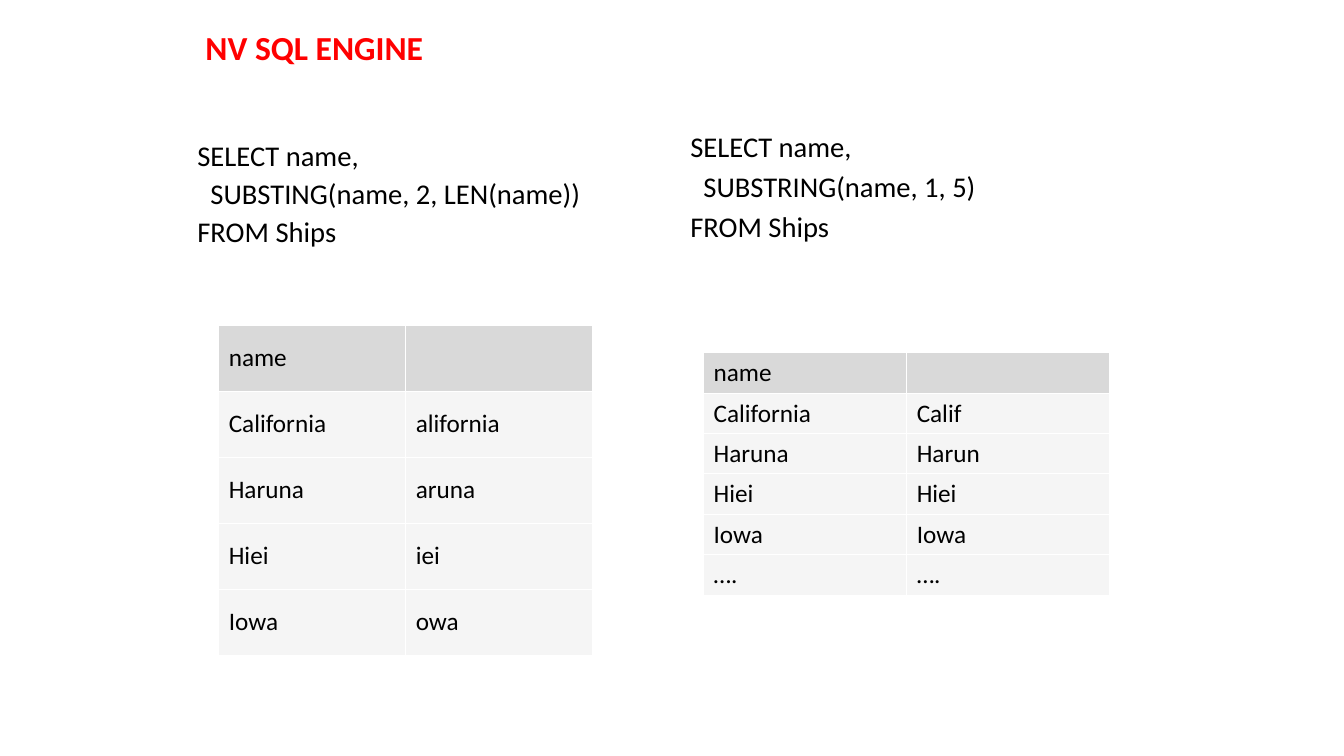
from lxml.etree import SubElement as add_element
from pptx import Presentation
from pptx.dml.color import RGBColor as Color
from pptx.enum.text import MSO_ANCHOR as Anchor
from pptx.oxml.ns import qn
from pptx.util import Inches, Pt

COLORS = {"title": "FF0000", "text": "000000", "header": "D9D9D9",
          "body": "F5F5F5", "border": "FFFFFF"}
COLUMNS, ROWS = 40, 30
CODE_INDENT = Inches(0.13)


class SlideBuilder:
    font = "Calibri"

    def __init__(self, deck):
        self.column = deck.slide_width / COLUMNS
        self.row = deck.slide_height / ROWS
        self.page = deck.slides.add_slide(deck.slide_layouts[6])

    def place(self, left, top, width, height):
        return (round(left * self.column), round(top * self.row),
                round(width * self.column), round(height * self.row))

    def add_span(self, para, text, size, color="text", bold=False):
        span = para.add_run()
        span.text = text
        span.font.name = self.font
        span.font.size = Pt(size)
        span.font.bold = bold
        span.font.color.rgb = Color.from_string(COLORS[color])

    def add_box(self, area, anchor):
        frame = self.page.shapes.add_textbox(*self.place(*area)).text_frame
        frame.word_wrap = True
        frame.vertical_anchor = anchor
        return frame

    def add_title(self, area, text):
        frame = self.add_box(area, Anchor.MIDDLE)
        self.add_span(frame.paragraphs[0], text, 24, "title", True)

    def add_query(self, area, lines, space_before, line_spacing):
        frame = self.add_box(area, Anchor.TOP)
        for index, (text, indented) in enumerate(lines):
            para = frame.add_paragraph() if index else frame.paragraphs[0]
            para.space_before = Pt(space_before)
            para.line_spacing = line_spacing
            if indented:
                para._p.get_or_add_pPr().set("marL", str(CODE_INDENT))
            self.add_span(para, text, 20.4)

    def add_borders(self, cell):
        properties = cell._tc.get_or_add_tcPr()
        for index, side in enumerate(("lnL", "lnR", "lnT", "lnB")):
            line = properties.makeelement(qn(f"a:{side}"), {"w": str(Pt(0.75))})
            fill = add_element(line, qn("a:solidFill"))
            add_element(fill, qn("a:srgbClr"), val=COLORS["border"])
            properties.insert(index, line)

    def add_result(self, left, top, width, row_height, records):
        area = self.place(left, top, width, row_height * len(records))
        table = self.page.shapes.add_table(len(records), 2, *area).table
        table.horz_banding = False
        for row, record in enumerate(records):
            for column, text in enumerate(record):
                cell = table.cell(row, column)
                cell.vertical_anchor = Anchor.MIDDLE
                cell.fill.solid()
                shade = COLORS["body" if row else "header"]
                cell.fill.fore_color.rgb = Color.from_string(shade)
                self.add_borders(cell)
                if text:
                    self.add_span(cell.text_frame.paragraphs[0], text, 18)


def query_lines(expression):
    return [("SELECT name,", False), (expression, True), ("FROM Ships", False)]


def main():
    deck = Presentation()
    deck.slide_width, deck.slide_height = Inches(13.33), Inches(7.5)
    slide = SlideBuilder(deck)
    ships = ["California", "Haruna", "Hiei", "Iowa"]
    header = ("name", "")

    slide.add_query((5.58, 5.64, 13.47, 4.64),
                    query_lines("SUBSTING(name, 2, LEN(name))"), 10, 0.7)
    slide.add_title((5.82, 1.08, 9.51, 1.6), "NV SQL ENGINE")
    slide.add_result(6.51, 12.9, 11.13, 2.62,
                     [header] + [(ship, ship[1:]) for ship in ships])
    slide.add_query((20.25, 4.92, 13.47, 4.64),
                    query_lines("SUBSTRING(name, 1, 5)"), 4, 1.0)
    slide.add_result(20.94, 14, 12.09, 1.6,
                     [header] + [(ship, ship[:5]) for ship in ships] + [("….", "….")])
    deck.save("out.pptx")


if __name__ == "__main__":
    main()
